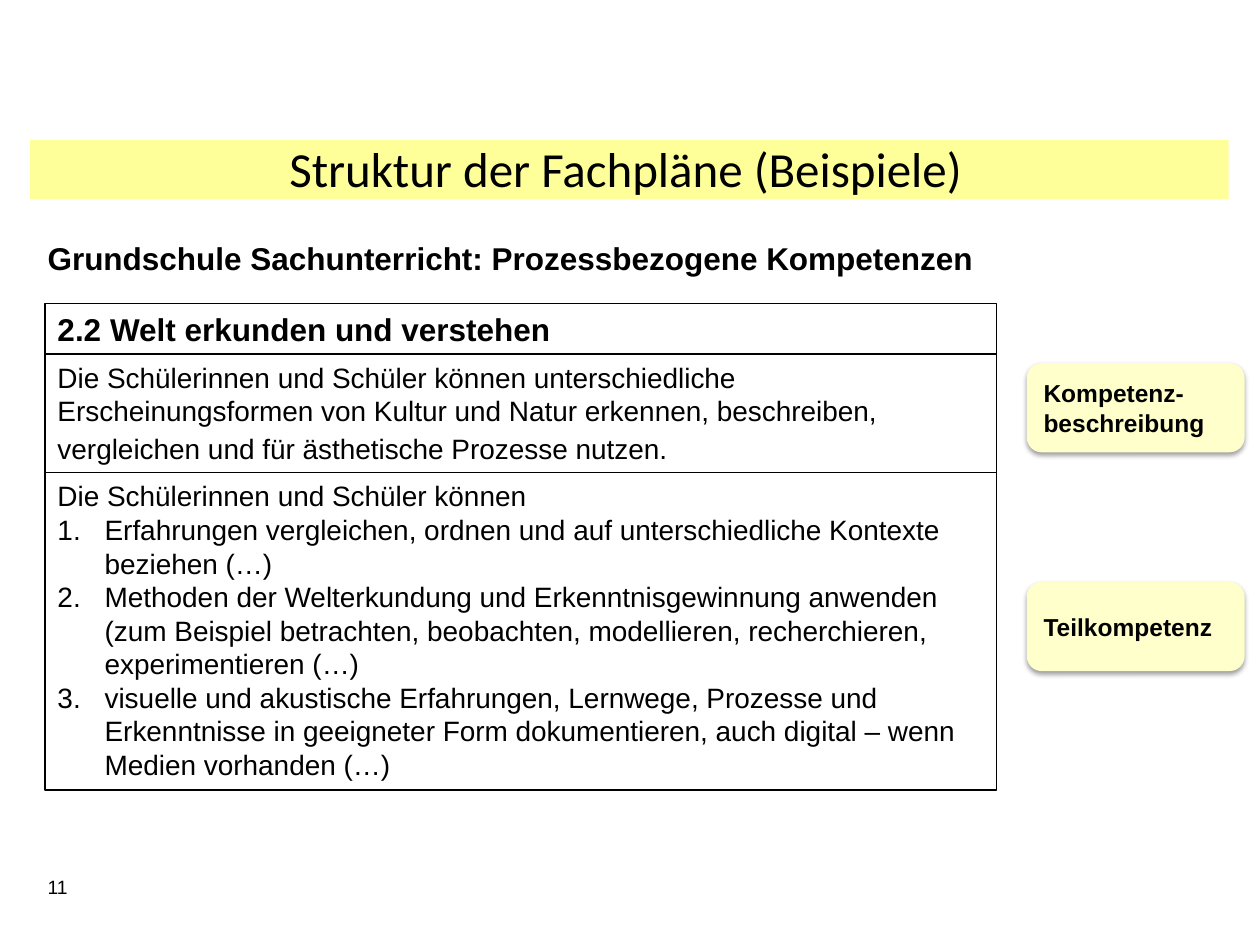
from dataclasses import dataclass

from lxml import etree
from pptx import Presentation
from pptx import util as u
from pptx.dml.color import RGBColor
from pptx.enum import shapes, text
from pptx.oxml import ns

BLACK = RGBColor(0x00, 0x00, 0x00)
TITLE_YELLOW = RGBColor(0xFF, 0xFF, 0x99)
LABEL_YELLOW = RGBColor(0xFF, 0xFF, 0xCC)
LIST_INDENT = u.Cm(0.95)


@dataclass
class Box:
    left: float
    top: float
    width: float
    height: float

    def lengths(self) -> list:
        return [u.Cm(n) for n in (self.left, self.top, self.width, self.height)]


@dataclass
class Style:
    size: float
    bold: bool = False
    font: str = "Arial"
    align: text.PP_ALIGN = text.PP_ALIGN.LEFT


@dataclass
class Section:
    """One row of the framed curriculum block."""
    height: float
    lines: list[str]
    style: Style
    numbered: bool = False


@dataclass
class Label:
    top: float
    wording: str


def format_font(font, style: Style) -> None:
    font.name, font.size, font.bold = style.font, u.Pt(style.size), style.bold
    font.color.rgb = BLACK


def write(frame, lines: list[str], style: Style) -> None:
    frame.word_wrap = True
    frame.text = "\n".join(lines)
    for paragraph in frame.paragraphs:
        paragraph.alignment = style.align
        for run in paragraph.runs:
            format_font(run.font, style)


def number(paragraph) -> None:
    properties = paragraph._p.get_or_add_pPr()
    properties.set("marL", str(int(LIST_INDENT)))
    properties.set("indent", str(-int(LIST_INDENT)))
    etree.SubElement(properties, ns.qn("a:buFont"), typeface="+mj-lt")
    etree.SubElement(properties, ns.qn("a:buAutoNum"), type="arabicPeriod")


def add_text(slide, box: Box, wording: str, style: Style) -> None:
    frame = slide.shapes.add_textbox(*box.lengths()).text_frame
    write(frame, [wording], style)
    frame.auto_size = text.MSO_AUTO_SIZE.SHAPE_TO_FIT_TEXT


def add_title_band(slide, box: Box) -> None:
    band = slide.shapes.add_shape(shapes.MSO_SHAPE.RECTANGLE, *box.lengths())
    band.shadow.inherit = False
    band.fill.solid()
    band.fill.fore_color.rgb = TITLE_YELLOW
    band.line.fill.background()


def add_section(slide, box: Box, section: Section):
    row = slide.shapes.add_shape(shapes.MSO_SHAPE.RECTANGLE, *box.lengths())
    row.shadow.inherit = False
    row.fill.background()
    row.line.color.rgb = BLACK
    row.line.width = u.Pt(0.75)
    frame = row.text_frame
    write(frame, section.lines, section.style)
    frame.vertical_anchor = text.MSO_ANCHOR.TOP
    frame.auto_size = text.MSO_AUTO_SIZE.SHAPE_TO_FIT_TEXT
    if section.numbered:
        for paragraph in frame.paragraphs[1:]:
            number(paragraph)
    return frame


def add_soft_shadow(shape) -> None:
    shape.shadow.inherit = False
    effects = shape._element.spPr.find(ns.qn("a:effectLst"))
    shadow = etree.SubElement(
        effects, ns.qn("a:outerShdw"), blurRad=str(int(u.Pt(3.1))),
        dist=str(int(u.Pt(1.6))), dir="5400000", rotWithShape="0")
    color = etree.SubElement(shadow, ns.qn("a:srgbClr"), val=str(BLACK))
    etree.SubElement(color, ns.qn("a:alpha"), val="38000")


def add_label(slide, label: Label) -> None:
    box = Box(20.7, label.top, 4.39, 1.8)
    shape = slide.shapes.add_shape(shapes.MSO_SHAPE.ROUNDED_RECTANGLE, *box.lengths())
    shape.fill.solid()
    shape.fill.fore_color.rgb = LABEL_YELLOW
    shape.line.fill.background()
    add_soft_shadow(shape)
    write(shape.text_frame, [label.wording], Style(14, bold=True))
    shape.text_frame.vertical_anchor = text.MSO_ANCHOR.MIDDLE


HEADING = Style(18, bold=True)
BODY = Style(16)

SECTIONS = [
    Section(1.02, ["2.2 Welt erkunden und verstehen"], HEADING),
    Section(2.39, [
        "Die Schülerinnen und Schüler können unterschiedliche Erscheinungsformen von "
        "Kultur und Natur erkennen, beschreiben, vergleichen und für ästhetische "
        "Prozesse nutzen."], BODY),
    Section(6.4, [
        "Die Schülerinnen und Schüler können",
        "Erfahrungen vergleichen, ordnen und auf unterschiedliche Kontexte beziehen (…)",
        "Methoden der Welterkundung und Erkenntnisgewinnung anwenden (zum Beispiel "
        "betrachten, beobachten, modellieren, recherchieren, experimentieren (…)",
        "visuelle und akustische Erfahrungen, Lernwege, Prozesse und Erkenntnisse in "
        "geeigneter Form dokumentieren, auch digital – wenn Medien vorhanden (…)",
    ], BODY, numbered=True),
]
LABELS = [Label(11.73, "Teilkompetenz"), Label(7.32, "Kompetenz-beschreibung")]


def main() -> None:
    deck = Presentation()
    deck.slide_width, deck.slide_height = u.Cm(25.4), u.Cm(19.05)
    slide = deck.slides.add_slide(deck.slide_layouts[6])

    add_title_band(slide, Box(0.61, 2.82, 24.16, 1.19))
    add_text(slide, Box(0.53, 2.67, 24.16, 1.45), "Struktur der Fachpläne (Beispiele)",
             Style(28, font="Calibri", align=text.PP_ALIGN.CENTER))
    add_text(slide, Box(0.71, 4.7, 24.69, 1.02),
             "Grundschule Sachunterricht: Prozessbezogene Kompetenzen", HEADING)

    top = 6.12
    frames = []
    for section in SECTIONS:
        frames.append(add_section(slide, Box(0.91, top, 19.18, section.height), section))
        top += section.height
    closing_tab = frames[1].paragraphs[0].add_run()
    closing_tab.text = "\t"
    format_font(closing_tab.font, Style(18))

    for label in LABELS:
        add_label(slide, label)
    add_text(slide, Box(0.71, 17.53, 1.4, 0.74), "11", Style(11))
    deck.save("out.pptx")


if __name__ == "__main__":
    main()
